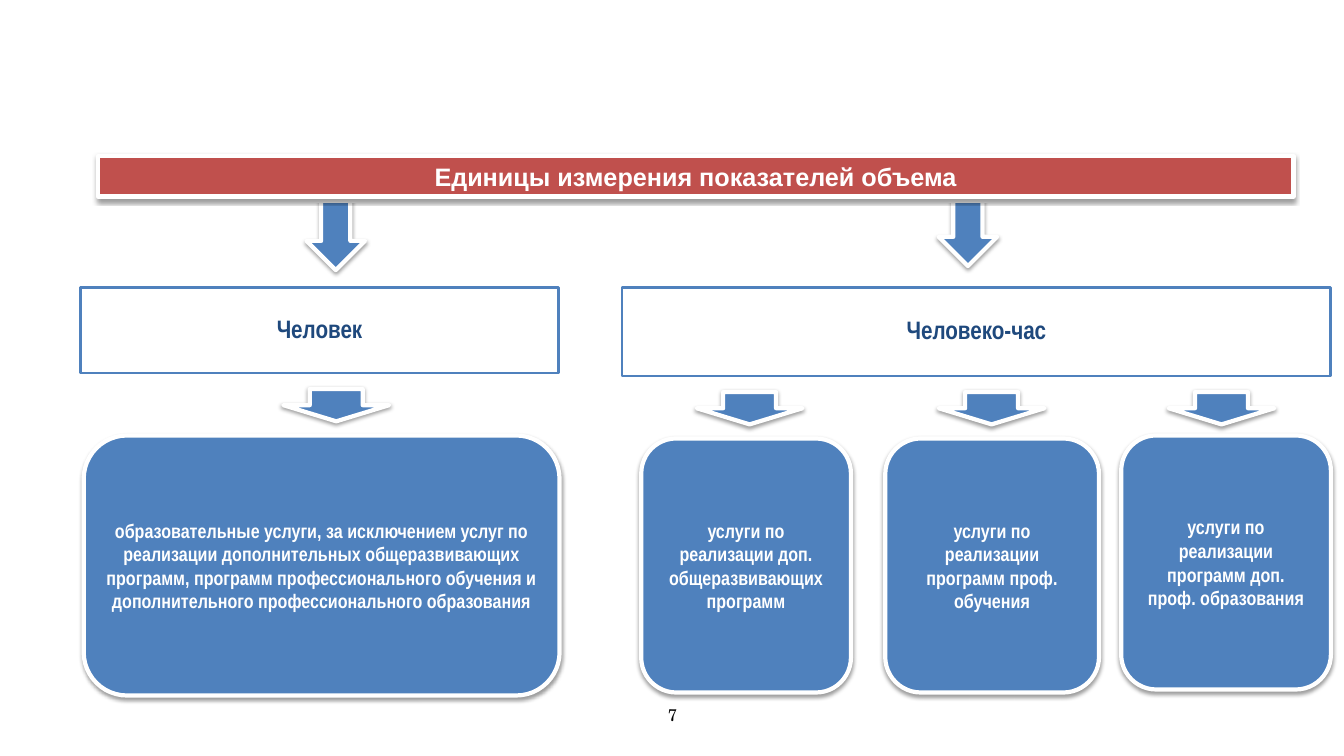
from lxml.etree import SubElement
from pptx import Presentation
from pptx.dml.color import RGBColor
from pptx.enum.shapes import MSO_SHAPE as Shape
from pptx.enum.text import MSO_ANCHOR as Anchor, PP_ALIGN as Align
from pptx.oxml.ns import qn
from pptx.util import Inches, Pt

BLUE = RGBColor(0x4F, 0x81, 0xBD)
NAVY = RGBColor(0x1F, 0x49, 0x7D)
RED = RGBColor(0xC0, 0x50, 0x4D)
WHITE = RGBColor(0xFF, 0xFF, 0xFF)
BLACK = RGBColor(0x00, 0x00, 0x00)

UNITS = [
    ("Человек", (0.8, 2.85, 4.74, 0.85), (3.04, 1.74), [
        ("образовательные услуги, за исключением услуг по реализации "
         "дополнительных общеразвивающих программ, программ профессионального "
         "обучения и дополнительного профессионального образования",
         (0.83, 4.32, 4.72, 2.58), (2.81, 3.86)),
    ]),
    ("Человеко-час", (6.17, 2.85, 7.03, 0.88), (9.31, 1.7), [
        ("услуги по реализации доп. общеразвивающих программ",
         (6.36, 4.35, 2.08, 2.52), (6.91, 3.89)),
        ("услуги по реализации программ проф. обучения",
         (8.78, 4.35, 2.12, 2.52), (9.31, 3.89)),
        ("услуги по реализации программ доп. проф. образования",
         (11.12, 4.32, 2.08, 2.52), (11.59, 3.89)),
    ]),
]


def add_block(slide, kind, box, fill, line, width):
    """Add a filled, outlined shape without a shadow."""
    block = slide.shapes.add_shape(kind, *map(Inches, box))
    block.shadow.inherit = False
    block.fill.solid()
    block.fill.fore_color.rgb = fill
    block.line.color.rgb = line
    block.line.width = Pt(width)
    return block


def add_raised(slide, kind, box, fill):
    """Add a white-edged shape with a soft shadow below it."""
    block = add_block(slide, kind, box, fill, WHITE, 3)
    effects = block.element.spPr.find(qn("a:effectLst"))
    shadow = SubElement(effects, qn("a:outerShdw"), blurRad=str(Pt(3.1)),
                        dist=str(Pt(1.6)), dir="5400000", rotWithShape="0")
    color = SubElement(shadow, qn("a:srgbClr"), val=str(BLACK))
    SubElement(color, qn("a:alpha"), val="38000")
    return block


def write(block, text, size, font, color, bold=True, anchor=Anchor.MIDDLE):
    """Put one centred paragraph in a shape and return it."""
    frame = block.text_frame
    frame.word_wrap = True
    frame.vertical_anchor = anchor
    paragraph = frame.paragraphs[0]
    paragraph.text = text
    paragraph.alignment = Align.CENTER
    paragraph.font.size = Pt(size)
    paragraph.font.name = font
    paragraph.font.bold = bold
    paragraph.font.color.rgb = color
    return paragraph


def add_unit(slide, name, box):
    """Draw the outlined box of a unit of measurement."""
    unit = add_block(slide, Shape.RECTANGLE, box, WHITE, BLUE, 2)
    write(unit, name, 18, "Arial Narrow", NAVY).line_spacing = 0.9
    frame = unit.text_frame
    frame.margin_left = frame.margin_right = Inches(0.12)
    frame.margin_top = frame.margin_bottom = Inches(0.12)


def add_service(slide, text, box, arrow):
    """Draw a rounded service card and the flat arrow above it."""
    add_raised(slide, Shape.DOWN_ARROW, (*arrow, 1.05, 0.32), BLUE)
    card = add_raised(slide, Shape.ROUNDED_RECTANGLE, box, BLUE)
    write(card, text, 14, "Arial Narrow", WHITE)


def add_header(slide, box):
    """Draw the red title bar over a white backing strip."""
    left, top, width, height = box
    add_block(slide, Shape.RECTANGLE, (left - 0.08, top + 0.05, width, height),
              WHITE, WHITE, 2)
    bar = add_raised(slide, Shape.RECTANGLE, box, RED)
    write(bar, "Единицы измерения показателей объема", 18, "Arial", WHITE,
          anchor=Anchor.TOP)


def add_page_number(slide, box):
    """Write the page number in the given box."""
    number = slide.shapes.add_textbox(*map(Inches, box))
    write(number, "7", 12, "TeX Gyre Schola", BLACK, bold=False)


def main():
    """Build the slide and save it."""
    deck = Presentation()
    deck.slide_width, deck.slide_height = Inches(13.33), Inches(7.5)
    slide = deck.slides.add_slide(deck.slide_layouts[6])
    add_page_number(slide, (4.56, 6.83, 4.22, 0.52))
    for name, box, arrow, services in UNITS:
        add_raised(slide, Shape.DOWN_ARROW, (*arrow, 0.58, 0.94), BLUE)
        add_unit(slide, name, box)
        for service in services:
            add_service(slide, *service)
    add_header(slide, (0.97, 1.55, 11.86, 0.4))
    deck.save("out.pptx")


if __name__ == "__main__":
    main()
